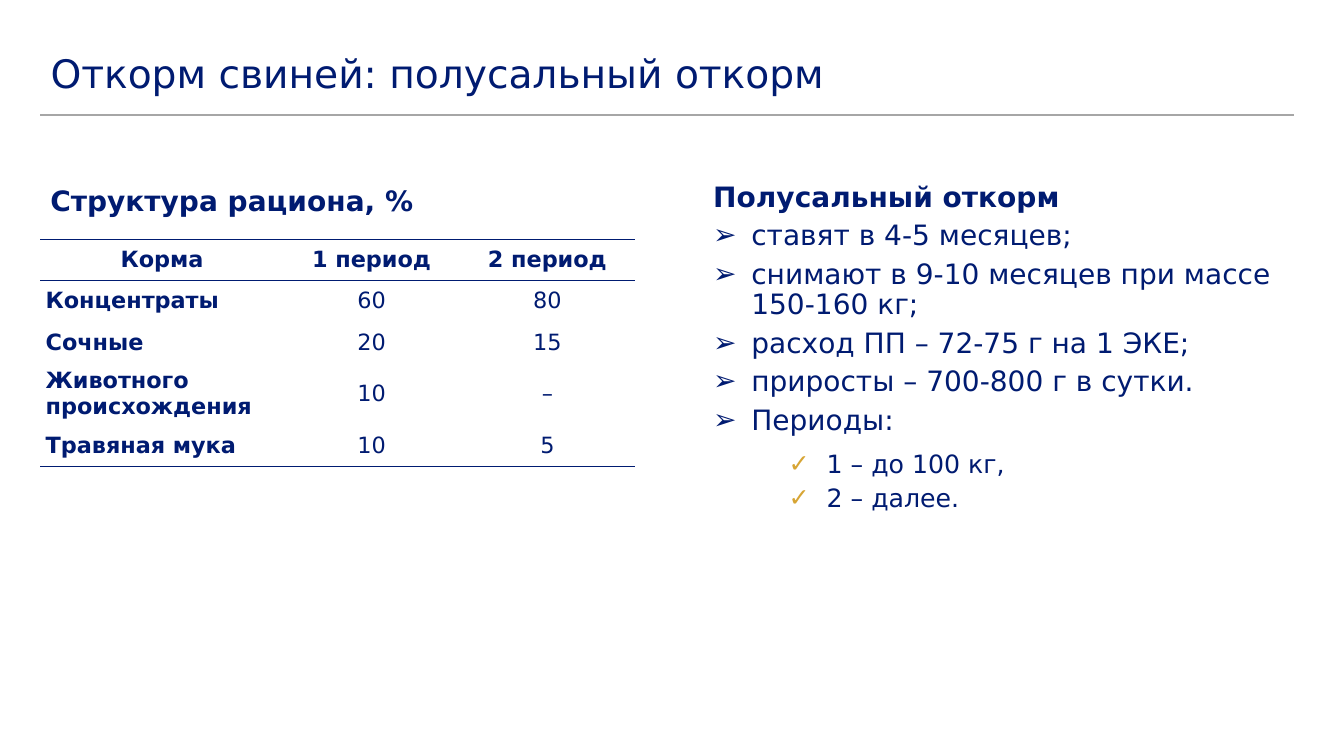
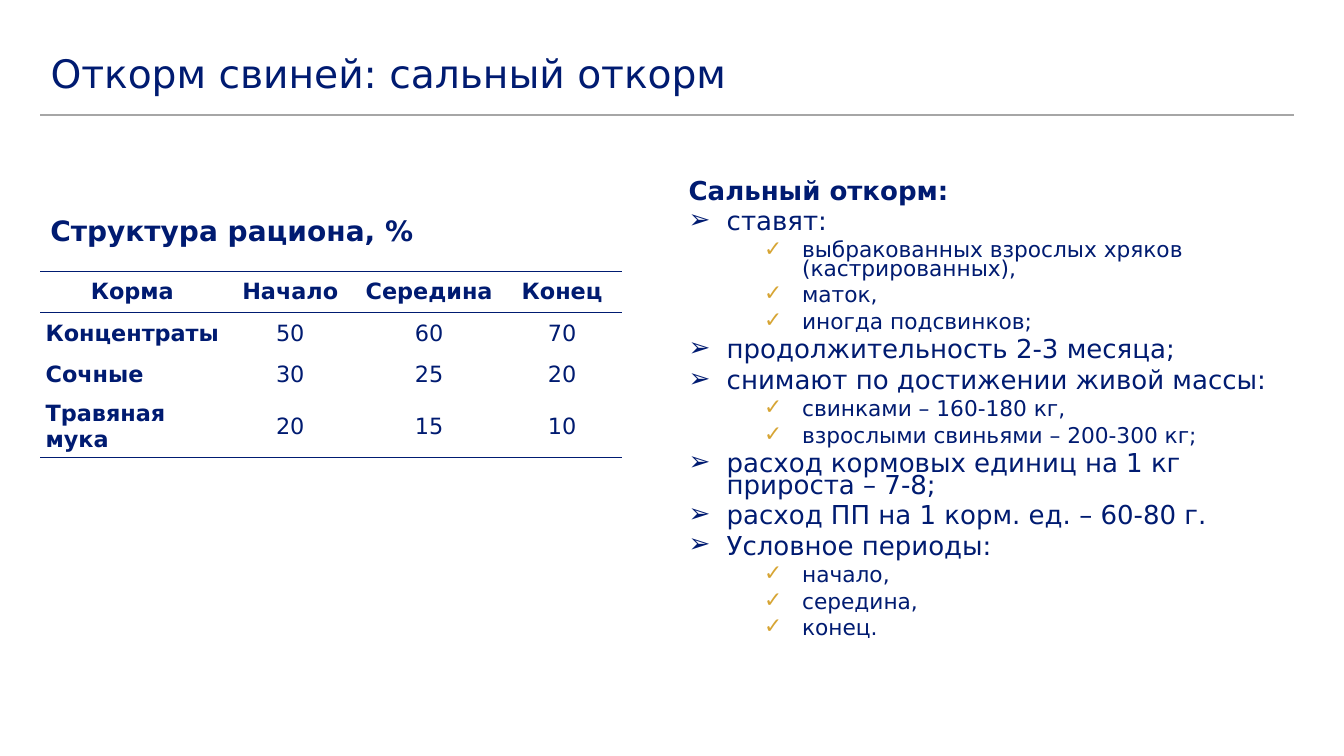
from dataclasses import dataclass

from lxml import etree
from pptx import Presentation
from pptx import util as u
from pptx.dml.color import RGBColor
from pptx.enum import shapes, text
from pptx.oxml import ns

COLORS = {"navy": "001B71", "gold": "D7A534", "rule": "A6A6A6", "white": "FFFFFF"}
FONT = "DejaVu Sans"
NO_STYLE = "{2D5ABB26-0587-4C30-8999-92F81FD0307C}"
LEFT = u.Cm(1.02)
CONTENT_WIDTH = u.Cm(31.6)
ROW_HEIGHT = u.Cm(1.04)
CELL_MARGIN = u.Cm(0.13)
HANGING = u.Cm(0.96)
BULLETS = {1: ("➢", "navy", HANGING), 2: ("✓", "gold", u.Cm(2.86))}
HEADING, ITEM, SUBITEM = range(3)


@dataclass
class ListStyle:
    sizes: tuple[float, float, float]
    line_spacing: float
    before: tuple[float, float, float]
    after: tuple[float, float, float]


@dataclass
class Ration:
    caption_top: float
    table_top: float
    widths: list[float]
    rows: list[list[str]]


@dataclass
class Fattening:
    title: str
    ration: Ration
    list_left: float
    list_style: ListStyle
    lines: list[tuple[int, str]]


FATTENINGS = [
    Fattening(
        "Откорм свиней: полусальный откорм",
        Ration(4.5, 6.03, [6.13, 4.43, 4.43], [
            ["Корма", "1 период", "2 период"],
            ["Концентраты", "60", "80"],
            ["Сочные", "20", "15"],
            ["Животного происхождения", "10", "–"],
            ["Травяная мука", "10", "5"],
        ]),
        17.72,
        ListStyle((20, 20, 18), 0.9, (0, 0, 5), (6, 6, 0)),
        [
            (HEADING, "Полусальный откорм"),
            (ITEM, "ставят в 4-5 месяцев;"),
            (ITEM, "снимают в 9-10 месяцев при массе 150-160 кг;"),
            (ITEM, "расход ПП – 72-75 г на 1 ЭКЕ;"),
            (ITEM, "приросты – 700-800 г в сутки."),
            (ITEM, "Периоды:"),
            (SUBITEM, "1 – до 100 кг,"),
            (SUBITEM, "2 – далее."),
        ],
    ),
    Fattening(
        "Откорм свиней: сальный откорм",
        Ration(5.26, 6.84, [4.63, 3.33, 3.67, 3.03], [
            ["Корма", "Начало", "Середина", "Конец"],
            ["Концентраты", "50", "60", "70"],
            ["Сочные", "30", "25", "20"],
            ["Травяная мука", "20", "15", "10"],
        ]),
        17.1,
        ListStyle((18.6, 18.6, 15.5), 0.7, (6, 6, 6), (0, 0, 0)),
        [
            (HEADING, "Сальный откорм:"),
            (ITEM, "ставят:"),
            (SUBITEM, "выбракованных взрослых хряков (кастрированных),"),
            (SUBITEM, "маток,"),
            (SUBITEM, "иногда подсвинков;"),
            (ITEM, "продолжительность 2-3 месяца;"),
            (ITEM, "снимают по достижении живой массы:"),
            (SUBITEM, "свинками – 160-180 кг,"),
            (SUBITEM, "взрослыми свиньями – 200-300 кг;"),
            (ITEM, "расход кормовых единиц на 1 кг прироста – 7-8;"),
            (ITEM, "расход ПП на 1 корм. ед. – 60-80 г."),
            (ITEM, "Условное периоды:"),
            (SUBITEM, "начало,"),
            (SUBITEM, "середина,"),
            (SUBITEM, "конец."),
        ],
    ),
]


def color(name: str) -> RGBColor:
    return RGBColor.from_string(COLORS[name])


def add_element(parent, tag: str, **attributes: str):
    return etree.SubElement(parent, ns.qn(tag), attributes)


def place(shape, left: int, top: int, width: int, height: int) -> None:
    shape.left, shape.top, shape.width, shape.height = left, top, width, height


def set_font(paragraph, size: float, bold: bool = False) -> None:
    font = paragraph.font
    font.name, font.size, font.bold = FONT, u.Pt(size), bold
    font.color.rgb = color("navy")


def add_title_rule(slide, layout) -> None:
    top = u.Cm(2.9)
    rule = slide.shapes.add_connector(
        shapes.MSO_CONNECTOR.STRAIGHT, LEFT, top, LEFT + CONTENT_WIDTH, top)
    rule.line.color.rgb = color("rule")
    rule.line.width = u.Pt(1)
    add_element(rule.element.spPr, "a:effectLst")
    rule.element.nvCxnSpPr.cNvPr.id = 20
    layout.shapes.element.append(rule.element)


def fill_title(title, words: str) -> None:
    frame = title.text_frame
    frame.text = words
    frame.auto_size = text.MSO_AUTO_SIZE.NONE
    frame.vertical_anchor = text.MSO_ANCHOR.MIDDLE
    paragraph = frame.paragraphs[0]
    paragraph.alignment = text.PP_ALIGN.LEFT
    paragraph.line_spacing = 0.9
    set_font(paragraph, 28)


def set_bullet(paragraph, level: int) -> None:
    properties = paragraph._p.get_or_add_pPr()
    if level == HEADING:
        properties.set("marL", "0")
        properties.set("indent", "0")
        add_element(properties, "a:buNone")
        return
    symbol, color_name, margin = BULLETS[level]
    properties.set("marL", str(margin))
    properties.set("indent", str(-HANGING))
    bullet_color = add_element(properties, "a:buClr")
    add_element(bullet_color, "a:srgbClr", val=COLORS[color_name])
    add_element(properties, "a:buFont", typeface=FONT)
    add_element(properties, "a:buChar", char=symbol)


def fill_list(body, fattening: Fattening) -> None:
    left = u.Cm(fattening.list_left)
    place(body, left, u.Cm(4.48), LEFT + CONTENT_WIDTH - left, u.Cm(12))
    body.fill.solid()
    body.fill.fore_color.rgb = color("white")
    frame = body.text_frame
    frame.auto_size = text.MSO_AUTO_SIZE.NONE
    frame.text = "\n".join(words for _, words in fattening.lines)
    style = fattening.list_style
    for index, (level, _) in enumerate(fattening.lines):
        paragraph = frame.paragraphs[index]
        paragraph.level = 1 if level == SUBITEM else 0
        set_bullet(paragraph, level)
        paragraph.line_spacing = style.line_spacing
        paragraph.space_before = u.Pt(style.before[level] if index else 0)
        paragraph.space_after = u.Pt(style.after[level])
        set_font(paragraph, style.sizes[level], level == HEADING)


def add_caption(slide, ration: Ration) -> None:
    caption = slide.shapes.add_textbox(
        LEFT, u.Cm(ration.caption_top), u.Cm(14), u.Cm(1.12))
    frame = caption.text_frame
    frame.word_wrap = True
    frame.auto_size = text.MSO_AUTO_SIZE.SHAPE_TO_FIT_TEXT
    frame.text = "Структура рациона, %"
    set_font(frame.paragraphs[0], 20, True)


def add_border(cell, tag: str) -> None:
    line = add_element(cell._tc.get_or_add_tcPr(), tag, w=str(u.Pt(1)))
    fill = add_element(line, "a:solidFill")
    add_element(fill, "a:srgbClr", val=COLORS["navy"])


def add_ration_table(slide, ration: Ration) -> None:
    row_count = len(ration.rows)
    table = slide.shapes.add_table(
        row_count, len(ration.widths), LEFT, u.Cm(ration.table_top),
        u.Cm(sum(ration.widths)), ROW_HEIGHT * row_count).table
    table.horz_banding = False
    table._tbl.tblPr.find(ns.qn("a:tableStyleId")).text = NO_STYLE
    for column, width in zip(table.columns, ration.widths):
        column.width = u.Cm(width)
    for row_index, row in enumerate(ration.rows):
        header = row_index == 0
        for column_index, words in enumerate(row):
            label = column_index == 0
            cell = table.cell(row_index, column_index)
            cell.text = words
            cell.vertical_anchor = text.MSO_ANCHOR.MIDDLE
            cell.margin_left = cell.margin_right = CELL_MARGIN
            cell.margin_top = cell.margin_bottom = CELL_MARGIN
            if header:
                add_border(cell, "a:lnT")
            if header or row_index == row_count - 1:
                add_border(cell, "a:lnB")
            cell.fill.background()
            paragraph = cell.text_frame.paragraphs[0]
            left_aligned = label and not header
            paragraph.alignment = (
                text.PP_ALIGN.LEFT if left_aligned else text.PP_ALIGN.CENTER)
            set_font(paragraph, 16, header or label)


def main() -> None:
    presentation = Presentation()
    presentation.slide_width = u.Cm(33.87)
    presentation.slide_height = u.Cm(19.05)
    layout = presentation.slide_layouts[1]
    place(layout.placeholders[0], LEFT, u.Cm(1.14), CONTENT_WIDTH, u.Cm(1.52))
    for index, fattening in enumerate(FATTENINGS):
        slide = presentation.slides.add_slide(layout)
        if index == 0:
            add_title_rule(slide, layout)
        fill_title(slide.shapes.title, fattening.title)
        add_ration_table(slide, fattening.ration)
        add_caption(slide, fattening.ration)
        fill_list(slide.placeholders[1], fattening)
    presentation.save("out.pptx")


if __name__ == "__main__":
    main()
